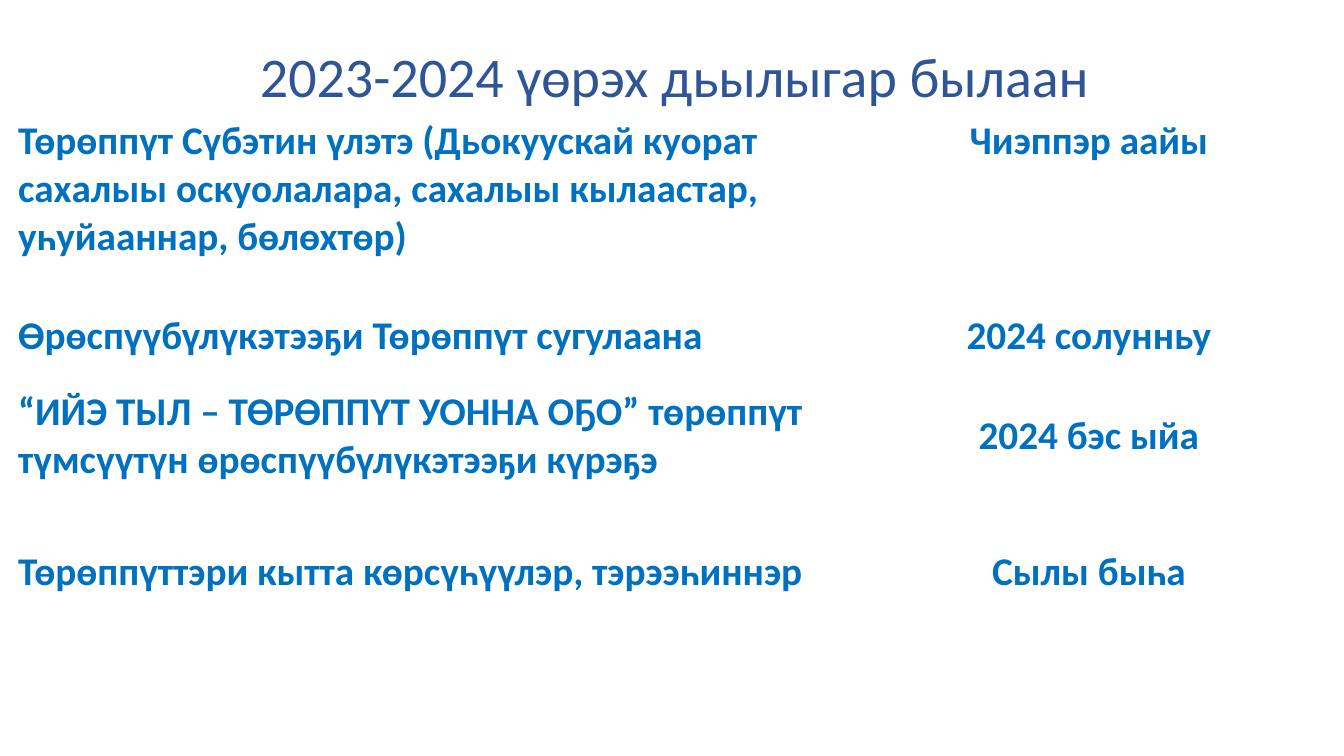
"""Build the school-year plan slide with its two-column schedule."""
from lxml.etree import SubElement
from pptx import Presentation
from pptx.dml.color import RGBColor
from pptx.enum.text import MSO_ANCHOR, MSO_AUTO_SIZE, PP_ALIGN
from pptx.oxml.ns import qn
from pptx.util import Inches, Pt

NAVY = RGBColor(0x2F, 0x55, 0x97)
BLUE = RGBColor(0x00, 0x70, 0xC0)
WHITE = RGBColor(0xFF, 0xFF, 0xFF)
FONT = "Calibri"
TITLE = "2023-2024 үөрэх дьылыгар былаан"
COLUMN_WIDTHS = (8.92, 3.54)
ROW_HEIGHTS = (1.7, 0.99, 1.35, 1.44)
PLAN = (
    ("Төрөппүт Сүбэтин үлэтэ (Дьокуускай куорат сахалыы оскуолалара, "
     "сахалыы кылаастар, уһуйааннар, бөлөхтөр)", 1.0, "Чиэппэр аайы", 1.0),
    ("Өрөспүүбүлүкэтээҕи Төрөппүт сугулаана", 1.5, "2024 солунньу", 1.5),
    ("“ИЙЭ ТЫЛ – ТӨРӨППҮТ УОННА ОҔО” төрөппүт түмсүүтүн "
     "өрөспүүбүлүкэтээҕи күрэҕэ", 1.0, "2024 бэс ыйа", 1.5),
    ("Төрөппүттэри кытта көрсүһүүлэр, тэрээһиннэр", 1.5, "Сылы быһа", 1.5),
)


def write_text(frame, text, *, size, color, bold=False, align=PP_ALIGN.LEFT, spacing=1.0):
    """Fill a text frame with one formatted paragraph."""
    frame.word_wrap = True
    paragraph = frame.paragraphs[0]
    paragraph.alignment = align
    paragraph.line_spacing = spacing
    run = paragraph.add_run()
    run.text = text
    run.font.name = FONT
    run.font.size = Pt(size)
    run.font.bold = bold
    run.font.color.rgb = color


def add_title(slide):
    """Place and format the slide title."""
    title = slide.shapes.title
    title.left, title.top = Inches(1.33), Inches(0.31)
    title.width, title.height = Inches(10.72), Inches(0.82)
    frame = title.text_frame
    write_text(frame, TITLE, size=40, color=NAVY, align=PP_ALIGN.CENTER, spacing=1.07)
    frame.auto_size = MSO_AUTO_SIZE.SHAPE_TO_FIT_TEXT
    frame.vertical_anchor = MSO_ANCHOR.MIDDLE


def set_borders(cell, bottom):
    """Draw white borders, with the given bottom width in points."""
    properties = cell._tc.get_or_add_tcPr()
    for side, width in (("L", 1), ("R", 1), ("T", 1), ("B", bottom)):
        line = SubElement(properties, qn(f"a:ln{side}"), w=str(Pt(width)))
        fill = SubElement(line, qn("a:solidFill"))
        SubElement(fill, qn("a:srgbClr"), val=str(WHITE))


def format_cell(cell, text, *, align, spacing, bottom):
    """Write one schedule cell with its margins, borders and empty fill."""
    cell.margin_left = cell.margin_right = Inches(0.07)
    cell.margin_top = cell.margin_bottom = 0
    cell.vertical_anchor = MSO_ANCHOR.TOP
    set_borders(cell, bottom)
    cell.fill.background()
    write_text(cell.text_frame, text, size=28, color=BLUE, bold=True,
               align=align, spacing=spacing)


def add_schedule(slide):
    """Add the table of activities and their dates."""
    table = slide.shapes.add_table(
        len(ROW_HEIGHTS), len(COLUMN_WIDTHS), Inches(0.11), Inches(1.16),
        Inches(sum(COLUMN_WIDTHS)), Inches(sum(ROW_HEIGHTS))).table
    table.horz_banding = False
    for column, width in zip(table.columns, COLUMN_WIDTHS):
        column.width = Inches(width)
    for index, (activity, activity_spacing, date, date_spacing) in enumerate(PLAN):
        table.rows[index].height = Inches(ROW_HEIGHTS[index])
        bottom = 3 if index == 0 else 1
        format_cell(table.cell(index, 0), activity, align=PP_ALIGN.LEFT,
                    spacing=activity_spacing, bottom=bottom)
        format_cell(table.cell(index, 1), date, align=PP_ALIGN.CENTER,
                    spacing=date_spacing, bottom=bottom)


def main():
    """Create and save the presentation."""
    presentation = Presentation()
    presentation.slide_width = Inches(13.33)
    presentation.slide_height = Inches(7.5)
    slide = presentation.slides.add_slide(presentation.slide_layouts.get_by_name("Title Only"))
    add_title(slide)
    add_schedule(slide)
    presentation.save("out.pptx")


if __name__ == "__main__":
    main()
